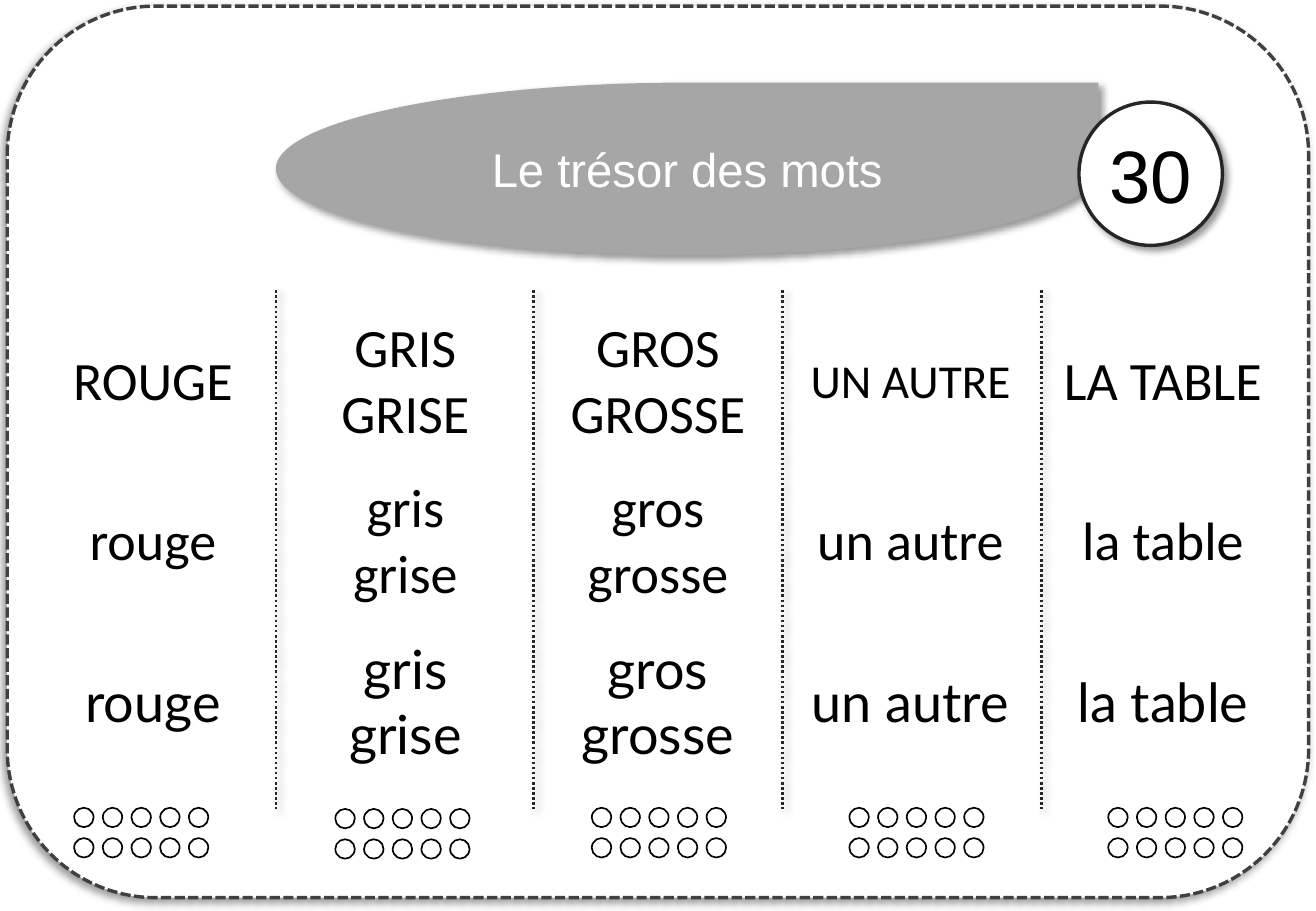
from dataclasses import dataclass
from itertools import product
from typing import Any, NamedTuple

import pptx
import pptx.dml.color
import pptx.enum.dml
import pptx.enum.shapes
import pptx.enum.text
import pptx.oxml
import pptx.oxml.ns
import pptx.util

RGBColor = pptx.dml.color.RGBColor
WHITE = RGBColor(0xFF, 0xFF, 0xFF)
BLACK = RGBColor(0x00, 0x00, 0x00)
GREY = RGBColor(0xA6, 0xA6, 0xA6)
DARK = RGBColor(0x26, 0x26, 0x26)
FRAME = RGBColor(0x40, 0x40, 0x40)

WIDTH = pptx.util.Inches(10.83)
HEIGHT = pptx.util.Inches(7.5)
Kind = pptx.enum.shapes.MSO_SHAPE
Dash = pptx.enum.dml.MSO_LINE
PLAIN_TABLE_STYLE = "{2D5ABB26-0587-4C30-8999-92F81FD0307C}"


class Box(NamedTuple):
    """A rectangle in percent of the slide's width and height."""
    left: float
    top: float
    width: float
    height: float

    def lengths(self) -> tuple[int, int, int, int]:
        return (across(self.left), down(self.top),
                across(self.width), down(self.height))


@dataclass(frozen=True)
class Stroke:
    color: RGBColor
    points: float
    dash: Any = Dash.SOLID


@dataclass(frozen=True)
class WordColumn:
    """A word (or its two forms) with the place of its ten dots."""
    forms: tuple[str, ...]
    dots_left: float
    dots_top: float = 88.67
    capitals_size: int = 32


BANNER = Box(20.96, 9.07, 62.51, 18.93)
DIVIDERS = (20.96, 40.54, 59.46, 79.13)
DIVIDER_TOP, DIVIDER_BOTTOM = 31.87, 88.8
DOT_WIDTH, DOT_HEIGHT = 1.48, 2.13
DOT_STEP_ACROSS, DOT_STEP_DOWN = 2.18, 3.33
WORD_COLUMNS = (
    WordColumn(("rouge",), 5.63),
    WordColumn(("gris", "grise"), 25.48, dots_top=88.8),
    WordColumn(("gros", "grosse"), 44.97),
    WordColumn(("un autre",), 64.54, capitals_size=28),
    WordColumn(("la table",), 84.21),
)
ROW_FONTS = ("Calibri", "Calibri", "Lato")


def across(percent: float) -> int:
    return round(WIDTH * percent / 100)


def down(percent: float) -> int:
    return round(HEIGHT * percent / 100)


def set_stroke(line: Any, stroke: Stroke) -> None:
    line.color.rgb = stroke.color
    line.width = pptx.util.Pt(stroke.points)
    line.dash_style = stroke.dash


def add_shadow(shape: Any, degrees: int = 45) -> None:
    """Append the soft shadow; the fill and line must be set before."""
    shape.element.spPr.append(pptx.oxml.parse_xml(
        f'<a:effectLst {pptx.oxml.ns.nsdecls("a")}>'
        f'<a:outerShdw blurRad="50800" dist="38100" dir="{degrees * 60000}" rotWithShape="0">'
        '<a:srgbClr val="000000"><a:alpha val="40000"/></a:srgbClr>'
        '</a:outerShdw></a:effectLst>'))


def add_figure(slide: Any, kind: Any, box: Box, fill: RGBColor,
               stroke: Stroke | None = None) -> Any:
    shape = slide.shapes.add_shape(kind, *box.lengths())
    shape.fill.solid()
    shape.fill.fore_color.rgb = fill
    if stroke:
        set_stroke(shape.line, stroke)
    else:
        shape.line.fill.background()
    return shape


def write_lines(frame: Any, lines: tuple[str, ...], font: str, size: int,
                color: RGBColor = BLACK) -> None:
    frame.text = "\n".join(lines)
    text_format = {"name": font, "size": pptx.util.Pt(size), "bold": False}
    for paragraph in frame.paragraphs:
        paragraph.alignment = pptx.enum.text.PP_ALIGN.CENTER
        for run in paragraph.runs:
            run.font.color.rgb = color
            for name, value in text_format.items():
                setattr(run.font, name, value)


def add_dividers(slide: Any) -> None:
    for position in DIVIDERS:
        divider = slide.shapes.add_connector(
            pptx.enum.shapes.MSO_CONNECTOR.STRAIGHT,
            across(position), down(DIVIDER_TOP), across(position), down(DIVIDER_BOTTOM))
        set_stroke(divider.line, Stroke(DARK, 1.5, Dash.ROUND_DOT))
        add_shadow(divider)


def add_dots(slide: Any, column: WordColumn) -> None:
    for row, place in product(range(2), range(5)):
        box = Box(column.dots_left + place * DOT_STEP_ACROSS,
                  column.dots_top + row * DOT_STEP_DOWN, DOT_WIDTH, DOT_HEIGHT)
        dot = add_figure(slide, Kind.OVAL, box, WHITE, Stroke(BLACK, 1))
        dot.shadow.inherit = False


def add_banner(slide: Any) -> None:
    add_shadow(add_figure(slide, Kind.TEAR, BANNER, GREY))
    title = slide.shapes.title
    title.left, title.top, title.width, title.height = BANNER.lengths()
    title.text_frame.vertical_anchor = pptx.enum.text.MSO_ANCHOR.MIDDLE
    write_lines(title.text_frame, ("Le trésor des mots",), "Arial", 28, WHITE)
    title.element.getparent().append(title.element)  # in front of the banner


def add_number(slide: Any) -> None:
    badge = add_figure(slide, Kind.OVAL, Box(81.99, 11.2, 10.9, 15.73),
                       WHITE, Stroke(DARK, 2))
    add_shadow(badge)
    frame = badge.text_frame
    for side in ("left", "top", "right", "bottom"):
        setattr(frame, f"margin_{side}", 0)
    frame.word_wrap = False
    frame.vertical_anchor = pptx.enum.text.MSO_ANCHOR.MIDDLE
    write_lines(frame, ("30",), "Arial", 44)


def add_word_table(slide: Any) -> None:
    """Show each word in capitals, then in two lower-case rows."""
    graphic_frame = slide.shapes.add_table(
        len(ROW_FONTS), len(WORD_COLUMNS), *Box(2.03, 33.2, 95.94, 52.53).lengths())
    table = graphic_frame.table
    table.first_row = table.horz_banding = False
    for style in graphic_frame.element.iter(pptx.oxml.ns.qn("a:tableStyleId")):
        style.text = PLAIN_TABLE_STYLE
    for (row, font), (index, column) in product(enumerate(ROW_FONTS), enumerate(WORD_COLUMNS)):
        cell = table.cell(row, index)
        cell.fill.background()
        cell.vertical_anchor = pptx.enum.text.MSO_ANCHOR.MIDDLE
        capitals = row == 0
        lines = tuple(form.upper() if capitals else form for form in column.forms)
        write_lines(cell.text_frame, lines, font, column.capitals_size if capitals else 32)


def main() -> None:
    presentation = pptx.Presentation()
    presentation.slide_width, presentation.slide_height = WIDTH, HEIGHT
    slide = presentation.slides.add_slide(presentation.slide_layouts.get_by_name("Title Only"))
    card = add_figure(slide, Kind.ROUNDED_RECTANGLE, Box(0.55, 0.67, 98.89, 97.87),
                      WHITE, Stroke(FRAME, 2, Dash.SQUARE_DOT))
    add_shadow(card, 135)
    add_dividers(slide)
    for column in WORD_COLUMNS:
        add_dots(slide, column)
    add_banner(slide)
    add_number(slide)
    add_word_table(slide)
    presentation.save("out.pptx")


if __name__ == "__main__":
    main()
